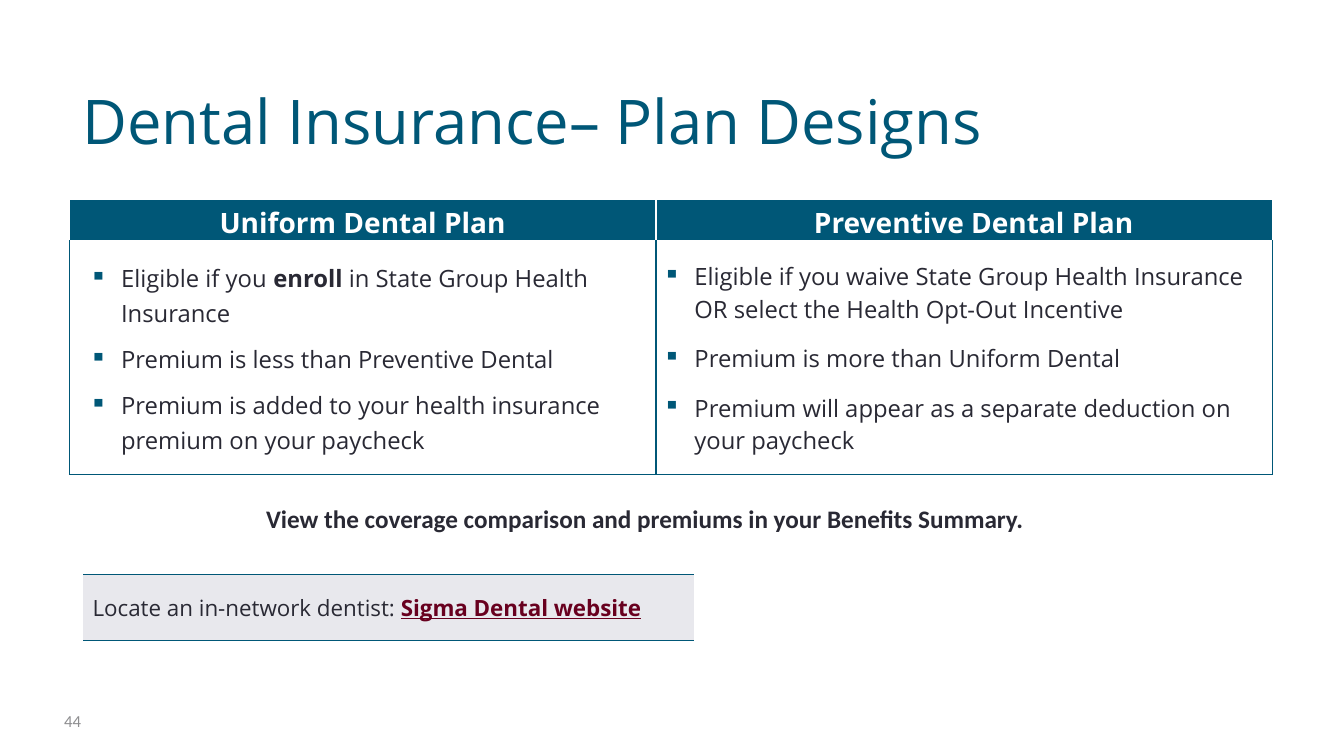
from lxml.etree import SubElement
from pptx import Presentation
from pptx.dml.color import RGBColor
from pptx.enum.text import MSO_ANCHOR as Anchor, PP_ALIGN as Align
from pptx.oxml.ns import qn
from pptx.util import Cm, Pt

TEAL, INK, WHITE = "005777", "292934", "FFFFFF"
GREY, PALE, WINE = "8E8E90", "E8E8ED", "68001F"
SANS, CALIBRI = "Open Sans", "Calibri"

UNIFORM_POINTS = [
    [("Eligible if you ", False), ("enroll", True),
     (" in State Group Health Insurance", False)],
    [("Premium is less than Preventive Dental", False)],
    [("Premium is added to your health insurance premium on your paycheck", False)],
]
PREVENTIVE_POINTS = [
    [("Eligible if you waive State Group Health Insurance OR select "
      "the Health Opt-Out Incentive", False)],
    [("Premium is more than Uniform Dental", False)],
    [("Premium will appear as a separate deduction on your paycheck", False)],
]


def rgb(color):
    return RGBColor.from_string(color)


def style(font, size, color, name=SANS, bold=False):
    font.size, font.name, font.bold = Pt(size), name, bold
    font.color.rgb = rgb(color)


def add_text(page, text, left, top, width, height, size, color, name,
             bold=False, align=Align.LEFT, anchor=Anchor.TOP):
    frame = page.shapes.add_textbox(Cm(left), Cm(top), Cm(width), Cm(height)).text_frame
    frame.word_wrap = True
    frame.vertical_anchor = anchor
    para = frame.paragraphs[0]
    para.text, para.alignment = text, align
    style(para.font, size, color, name, bold)
    return frame


def add_grid(page, left, top, widths, heights):
    """Add a table without style bands, sized by its columns and rows."""
    table = page.shapes.add_table(len(heights), len(widths), Cm(left), Cm(top),
                                  Cm(sum(widths)), Cm(sum(heights))).table
    table.first_row = table.horz_banding = False
    for column, width in zip(table.columns, widths):
        column.width = Cm(width)
    for row, height in zip(table.rows, heights):
        row.height = Cm(height)
    return table


def format_cell(cell, fill, borders):
    """Fill a cell and draw 1 pt borders; borders maps L, R, T, B in order to colours."""
    properties = cell._tc.get_or_add_tcPr()
    for side, color in borders.items():
        line = SubElement(properties, qn(f"a:ln{side}"), w=str(Pt(1)))
        SubElement(SubElement(line, qn("a:solidFill")), qn("a:srgbClr"), val=color)
    cell.fill.solid()
    cell.fill.fore_color.rgb = rgb(fill)
    cell.vertical_anchor = Anchor.MIDDLE


def set_margins(cell):
    cell.margin_left = cell.margin_right = Cm(0.18)
    cell.margin_top, cell.margin_bottom = Cm(0.03), 0


def indent(para, left, hanging=0):
    properties = para._p.get_or_add_pPr()
    properties.set("marL", str(Cm(left)))
    properties.set("indent", str(-Cm(hanging)))
    return properties


def add_bullet(para, left):
    properties = indent(para, left, 0.79)
    color = SubElement(properties, qn("a:buClr"))
    SubElement(color, qn("a:srgbClr"), val=TEAL)
    SubElement(properties, qn("a:buChar"), char="▪")


def fill_header(cell, text, left):
    format_cell(cell, TEAL, dict.fromkeys("LRTB", WHITE))
    set_margins(cell)
    para = cell.text_frame.paragraphs[0]
    para.text, para.alignment, para.line_spacing = text, Align.CENTER, 1.07
    indent(para, left)
    style(para.font, 20, WHITE, bold=True)


def fill_points(cell, points, left, line_spacing, before, after):
    format_cell(cell, WHITE, {"L": TEAL, "R": TEAL, "T": WHITE, "B": TEAL})
    set_margins(cell)
    frame = cell.text_frame
    for index, spans in enumerate(points):
        para = frame.add_paragraph() if index else frame.paragraphs[0]
        add_bullet(para, left)
        para.line_spacing, para.space_after = line_spacing, Pt(after)
        para.space_before = Pt(before if index else 0)
        style(para.font, 17, INK)
        for text, bold in spans:
            span = para.add_run()
            span.text = text
            if bold:
                span.font.bold = True


def add_plans(page):
    table = add_grid(page, 1.75, 5.03, [14.78, 15.54], [1.04, 5.89])
    fill_header(table.cell(0, 0), "Uniform Dental Plan", 0)
    fill_header(table.cell(0, 1), "Preventive Dental Plan", 0.48)
    fill_points(table.cell(1, 0), UNIFORM_POINTS, 1.12, 1.07, 0, 8)
    fill_points(table.cell(1, 1), PREVENTIVE_POINTS, 0.79, 1.0, 6, 6)


def add_dentist_locator(page):
    cell = add_grid(page, 2.08, 14.48, [15.42], [1.65]).cell(0, 0)
    format_cell(cell, PALE, {"T": TEAL, "B": TEAL})
    para = cell.text_frame.paragraphs[0]
    style(para.font, 16, INK)
    para.add_run().text = "Locate an in-network dentist: "
    site = para.add_run()
    site.text = "Sigma Dental website"
    site.font.bold = site.font.underline = True
    site.font.color.rgb = rgb(WINE)


def main():
    deck = Presentation()
    deck.slide_width, deck.slide_height = Cm(33.87), Cm(19.05)
    page = deck.slides.add_slide(deck.slide_layouts[6])
    title = add_text(page, "Dental Insurance– Plan Designs", 1.88, 0.76, 30.33, 3.18,
                     44, TEAL, SANS, anchor=Anchor.BOTTOM)
    title.margin_left, title.margin_bottom = Cm(0.2), 0
    add_text(page, "44", 1.37, 17.65, 1.42, 1.02, 12, GREY, CALIBRI, anchor=Anchor.MIDDLE)
    add_plans(page)
    add_dentist_locator(page)
    add_text(page, "View the coverage comparison and premiums in your Benefits Summary.",
             1.88, 12.55, 28.75, 1.02, 18, INK, CALIBRI, bold=True, align=Align.CENTER)
    deck.save("out.pptx")


if __name__ == "__main__":
    main()
